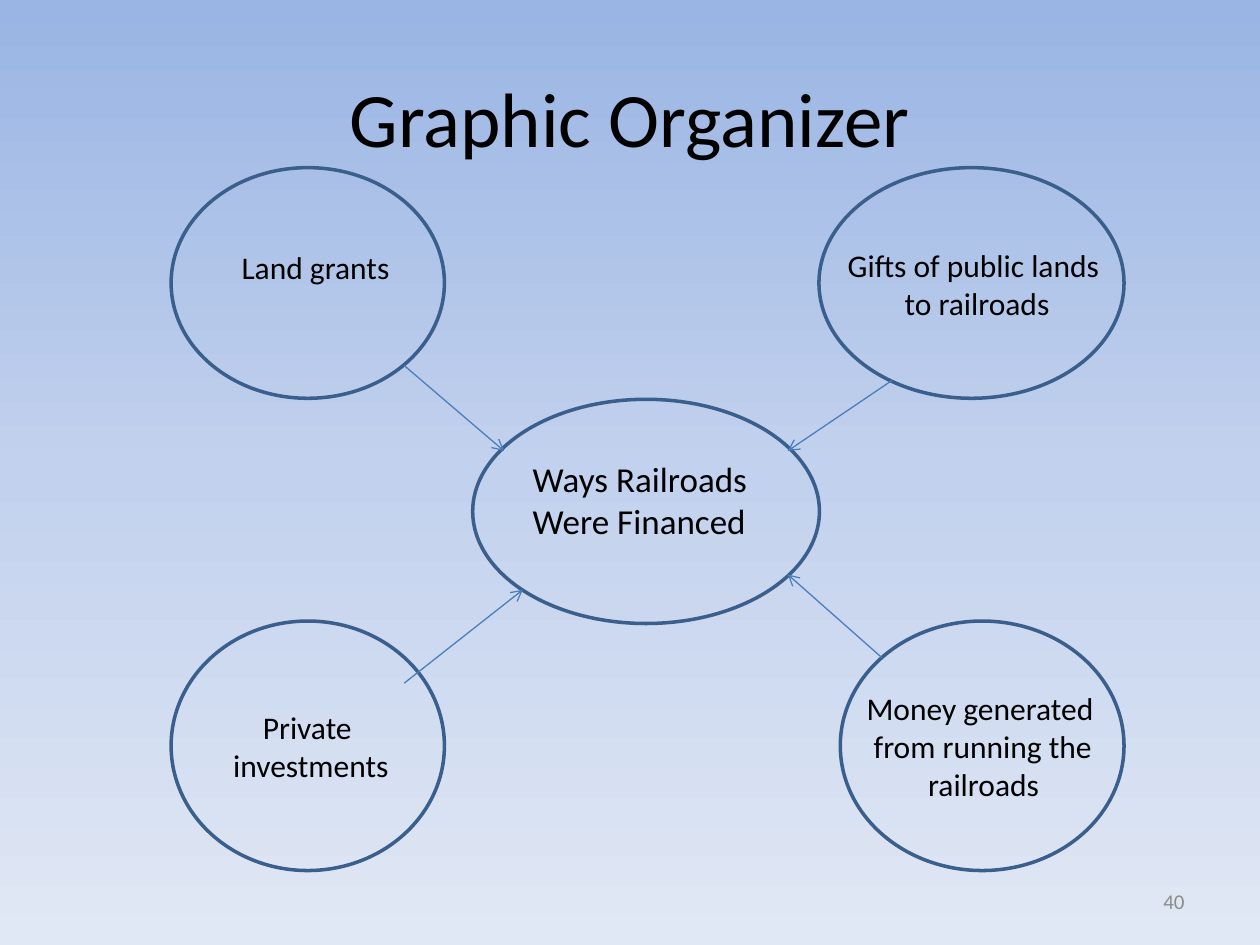
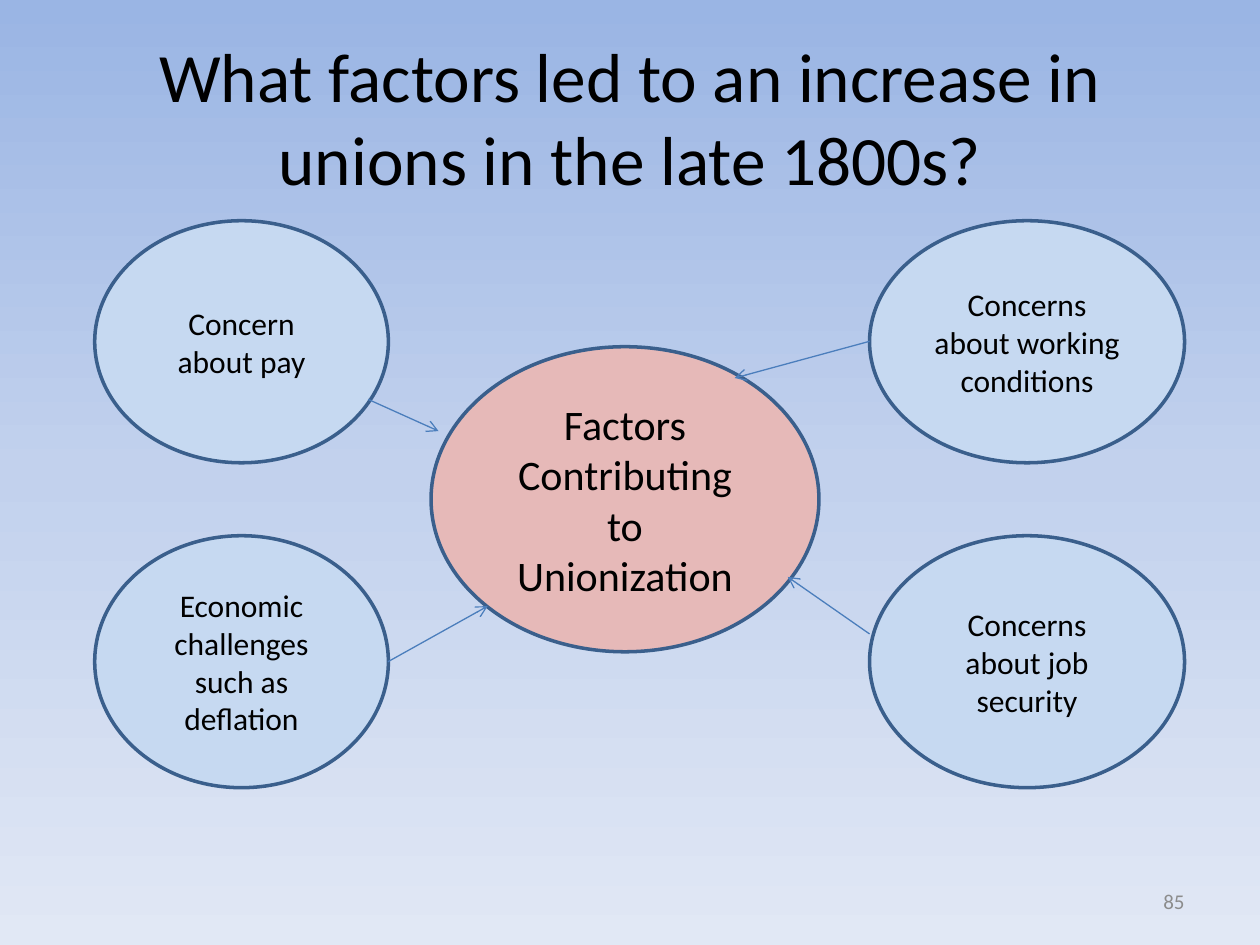
from copy import deepcopy

from lxml.etree import SubElement
from pptx import Presentation
from pptx.dml.color import RGBColor
from pptx.enum.shapes import MSO_CONNECTOR as Link, MSO_SHAPE as Shape
from pptx.enum.text import MSO_ANCHOR as Anchor, MSO_AUTO_SIZE as Fit, PP_ALIGN as Align
from pptx.oxml.ns import qn
from pptx.util import Cm, Pt

BLACK = RGBColor(0x00, 0x00, 0x00)
GREY = RGBColor(0x8C, 0x8C, 0x8C)
OUTLINE = RGBColor(0x3A, 0x5F, 0x8C)
ARROW = RGBColor(0x4B, 0x7E, 0xBC)
PALE_BLUE = RGBColor(0xC6, 0xD9, 0xF1)
PINK = RGBColor(0xE6, 0xB9, 0xB8)
SKY = (RGBColor(0x9A, 0xB5, 0xE4), RGBColor(0xC2, 0xD1, 0xED), RGBColor(0xE1, 0xE8, 0xF5))
FONT = "Calibri"
TITLE_ONLY = 5


class Organizer:
    """Holds the deck's style and the current page."""

    def __init__(self):
        self.deck = Presentation()
        self.deck.slide_width, self.deck.slide_height = Cm(25.4), Cm(19.05)
        self.page = None
        self.paint_background()

    def paint_background(self):
        fill = self.deck.slide_master.background.fill
        fill.gradient()
        fill.gradient_angle = 270  # counted anticlockwise: top to bottom
        stop_list = self.deck.slide_master.element.find(".//" + qn("a:gsLst"))
        stop_list.insert(1, deepcopy(stop_list[0]))
        for index, (stop, color) in enumerate(zip(fill.gradient_stops, SKY)):
            stop.color.rgb = color
            stop.position = index / 2

    def new_page(self, title, size, number):
        self.page = self.deck.slides.add_slide(self.deck.slide_layouts[TITLE_ONLY])
        box = self.page.shapes.title
        box.left, box.top, box.width, box.height = Cm(1.27), Cm(0.76), Cm(22.86), Cm(3.18)
        self.set_text(box, [title], size)
        self.label((18.21, 17.65, 5.92, 1.02), [number], 12, [Align.RIGHT],
                   color=GREY, anchor=Anchor.MIDDLE, fit=Fit.NONE)

    def set_text(self, box, lines, size, aligns=(Align.CENTER,), color=BLACK,
                 anchor=Anchor.MIDDLE):
        """Fill a box; the last alignment serves all remaining lines."""
        frame = box.text_frame
        frame.word_wrap = True
        frame.vertical_anchor = anchor
        frame.text = "\n".join(lines)
        for index, para in enumerate(frame.paragraphs):
            para.alignment = aligns[min(index, len(aligns) - 1)]
            para.font.name, para.font.size = FONT, Pt(size)
            para.font.color.rgb = color

    def label(self, place, lines, size, aligns, color=BLACK, anchor=Anchor.TOP,
              fit=Fit.SHAPE_TO_FIT_TEXT, wrap=True):
        box = self.page.shapes.add_textbox(*map(Cm, place))
        self.set_text(box, lines, size, aligns, color, anchor)
        box.text_frame.word_wrap = wrap
        box.text_frame.auto_size = fit

    def bubble(self, place, text=None, size=18, fill=None):
        oval = self.page.shapes.add_shape(Shape.OVAL, *map(Cm, place))
        oval.shadow.inherit = False
        oval.line.color.rgb, oval.line.width = OUTLINE, Pt(2)
        if fill is None:
            oval.fill.background()
        else:
            oval.fill.solid()
            oval.fill.fore_color.rgb = fill
        if text:
            self.set_text(oval, [text], size)

    def arrow(self, *ends):
        line = self.page.shapes.add_connector(Link.STRAIGHT, *map(Cm, ends))
        line.line.color.rgb, line.line.width = ARROW, Pt(0.75)
        properties = line._element.spPr
        SubElement(properties.find(qn("a:ln")), qn("a:tailEnd"), type="arrow")
        SubElement(properties, qn("a:effectLst"))


def railroad_page(organizer):
    organizer.new_page("Graphic Organizer", 44, "40")

    # Centre and four outer bubbles
    organizer.bubble((9.53, 8.05, 6.99, 4.52))
    upper, lower = (3.38, 4.65), (12.52, 5.03)
    for left, width, (top, height) in ((3.45, 5.51, upper), (3.45, 5.51, lower),
                                       (16.51, 6.15, upper), (16.94, 5.72, lower)):
        organizer.bubble((left, top, width, height))

    # Arrows to the centre
    for ends in ((8.15, 7.37, 10.16, 9.09), (8.15, 13.77, 10.54, 11.89),
                 (17.98, 7.67, 15.88, 9.09), (17.78, 13.26, 15.88, 11.58)):
        organizer.arrow(*ends)

    # Labels over the bubbles
    organizer.label((10.49, 9.09, 4.9, 1.96), ["Ways Railroads Were Financed"], 20, [Align.LEFT])
    for place, lines, aligns in (
        ((4.62, 4.88, 3.53, 1.02), ["Land grants"], [Align.LEFT]),
        ((16.84, 4.83, 5.66, 1.8), ["Gifts of public lands", " to railroads"],
         [Align.LEFT, Align.CENTER]),
        ((4.29, 14.15, 3.81, 1.8), ["Private", " investments"], [Align.CENTER]),
        ((17.22, 13.77, 5.16, 2.57), ["Money generated", " from running the", " railroads"],
         [Align.LEFT, Align.LEFT, Align.CENTER]),
    ):
        organizer.label(place, lines, 18, aligns, wrap=False)


def union_page(organizer):
    organizer.new_page("What factors led to an increase in unions in the late 1800s?", 39.6, "85")

    # Centre and four outer bubbles
    organizer.bubble((8.69, 6.99, 7.82, 6.15), "Factors Contributing to Unionization", 24, PINK)
    rows = ((4.45, 4.88), (10.8, 5.08))
    columns = (
        (17.53, 6.35, ("Concerns about working conditions", "Concerns about job security")),
        (1.91, 5.92, ("Concern about pay", "Economic challenges such as deflation")),
    )
    for left, width, factors in columns:
        for (top, height), factor in zip(rows, factors):
            organizer.bubble((left, top, width, height), factor, fill=PALE_BLUE)

    # Arrows to the centre
    for ends in ((7.42, 8.05, 8.84, 8.69), (7.82, 13.34, 9.83, 12.22),
                 (17.53, 6.88, 14.81, 7.62), (17.53, 12.78, 15.88, 11.63)):
        organizer.arrow(*ends)


def main():
    organizer = Organizer()
    railroad_page(organizer)
    union_page(organizer)
    organizer.deck.save("out.pptx")


if __name__ == "__main__":
    main()
